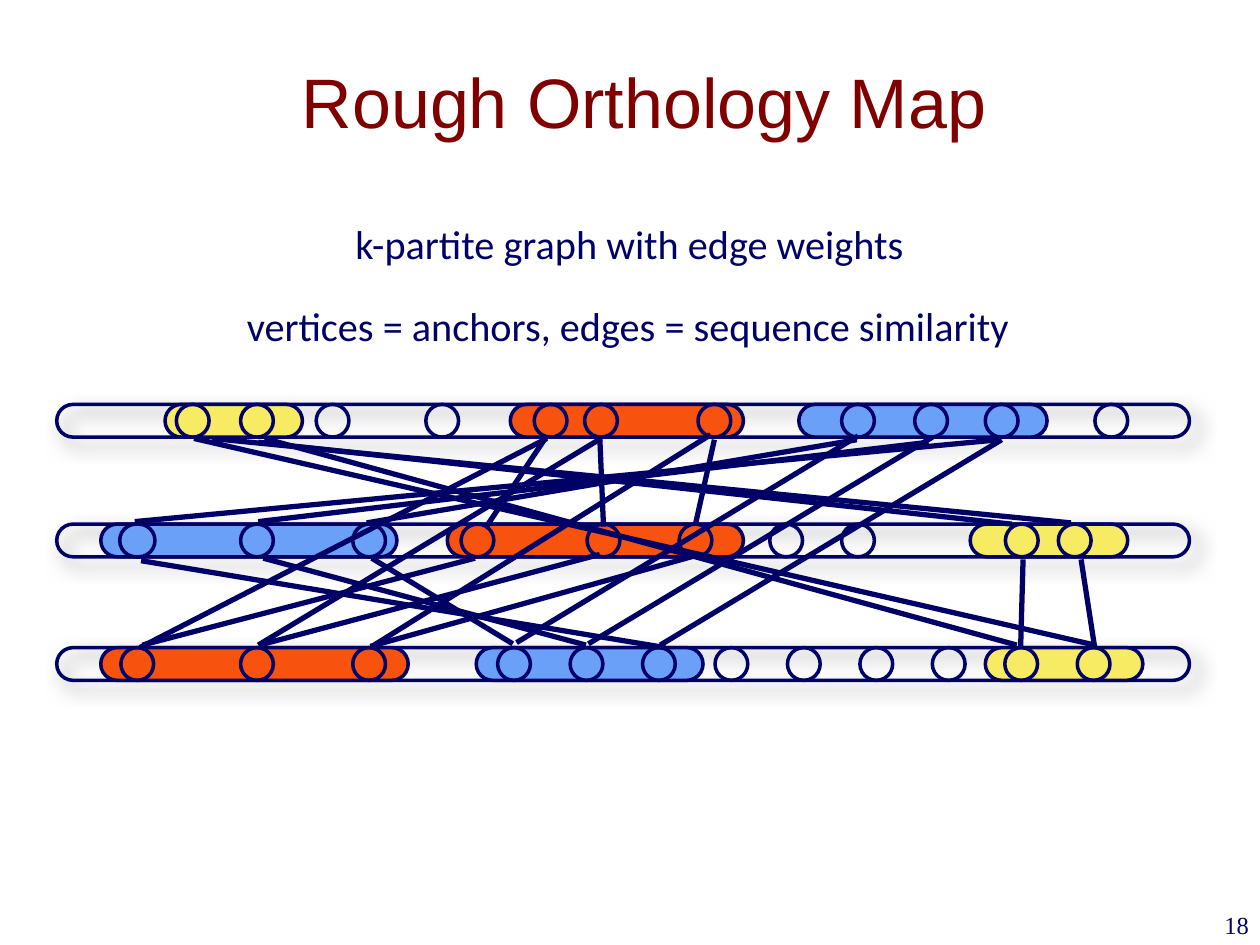
from lxml.etree import SubElement
from pptx import Presentation
from pptx.dml.color import RGBColor
from pptx.enum.shapes import MSO_CONNECTOR, MSO_SHAPE
from pptx.enum.text import MSO_ANCHOR, PP_ALIGN
from pptx.oxml import parse_xml
from pptx.oxml.ns import nsdecls, qn
from pptx.util import Inches, Pt

NAVY = RGBColor(0x00, 0x00, 0x66)
MAROON = RGBColor(0x80, 0x00, 0x00)
YELLOW = RGBColor(0xF7, 0xEB, 0x63)
BLUE = RGBColor(0x6A, 0xA0, 0xF7)
ORANGE = RGBColor(0xF7, 0x52, 0x0E)

TOP, MID, LOW = 3.21, 4.16, 5.14
SIZE = 0.26
SHADOW = f"""<a:effectLst {nsdecls('a')}>
  <a:outerShdw blurRad="{Pt(10)}" dist="{Pt(6)}" dir="2700000" algn="ctr" rotWithShape="0">
    <a:srgbClr val="808080"><a:alpha val="75000"/></a:srgbClr>
  </a:outerShdw>
</a:effectLst>"""

prs = Presentation()
prs.slide_width, prs.slide_height = Inches(10), Inches(7.5)
slide = prs.slides.add_slide(prs.slide_layouts[5])
shapes = slide.shapes


def add_part(kind, left, top, width, fill=None):
    """Add an outlined bar or circle of the common height."""
    part = shapes.add_shape(kind, Inches(left), Inches(top), Inches(width), Inches(SIZE))
    if kind == MSO_SHAPE.ROUNDED_RECTANGLE:
        part.adjustments[0] = 0.5
    if fill is None:
        part.fill.background()
    else:
        part.fill.solid()
        part.fill.fore_color.rgb = fill
    part.line.color.rgb = NAVY
    part.line.width = Pt(2)
    part.shadow.inherit = False
    return part


def set_text(frame, text, name, size, color, align):
    frame.word_wrap = True
    frame.text = text
    para = frame.paragraphs[0]
    para.alignment = align
    para.font.name = name
    para.font.size = Pt(size)
    para.font.color.rgb = color


# Title
title = shapes.title
title.left, title.top = Inches(0.83), Inches(0.17)
title.width, title.height = Inches(8.5), Inches(1.25)
frame = title.text_frame
frame.vertical_anchor = MSO_ANCHOR.MIDDLE
frame.margin_right = Inches(0.04)
set_text(frame, "Rough Orthology Map", "Arial", 40, MAROON, PP_ALIGN.CENTER)

# Genomes
for top in (TOP, MID, LOW):
    track = add_part(MSO_SHAPE.ROUNDED_RECTANGLE, 0.45, top, 8.99)
    props = track._element.spPr
    props.replace(props.find(qn("a:effectLst")), parse_xml(SHADOW))

# Matching segments
segments = [
    (1.31, TOP, 1.09, YELLOW), (7.7, MID, 1.25, YELLOW), (7.82, LOW, 1.25, YELLOW),
    (6.34, TOP, 1.97, BLUE), (3.78, LOW, 1.8, BLUE), (0.8, MID, 2.35, BLUE),
    (0.8, LOW, 2.44, ORANGE), (3.55, MID, 2.35, ORANGE), (4.05, TOP, 1.85, ORANGE),
]
for segment in segments:
    add_part(MSO_SHAPE.ROUNDED_RECTANGLE, *segment)

# Anchors
add_part(MSO_SHAPE.ROUNDED_RECTANGLE, 0.95, MID, 0.28)
anchors = {
    TOP: [1.4, 1.91, 2.51, 3.38, 4.24, 4.64, 5.54, 6.68, 7.26, 7.82, 8.69],
    MID: [1.91, 2.8, 3.66, 4.66, 5.39, 6.11, 6.68, 7.98, 8.4],
    LOW: [0.96, 1.91, 2.8] + [3.95 + 0.575 * i for i in range(9)],
}
for top, lefts in anchors.items():
    for left in lefts:
        add_part(MSO_SHAPE.OVAL, left, top, SIZE)

# Similarity edges: x1, y1, x2, y2
edges = [
    # top to middle
    (5.67, 3.49, 5.52, 4.16), (4.76, 3.46, 4.79, 4.18), (4.34, 3.46, 3.86, 4.18),
    (2.05, 3.51, 8.03, 4.16), (1.68, 3.48, 8.5, 4.15), (7.37, 3.51, 2.05, 4.14),
    (7.93, 3.49, 1.07, 4.14), (6.8, 3.49, 2.91, 4.15),
    # middle to bottom
    (5.28, 5.14, 1.12, 4.45), (4.76, 4.4, 2.06, 5.12), (4.07, 5.11, 2.95, 4.43),
    (4.65, 5.12, 2.09, 4.43), (3.77, 4.43, 1.13, 5.12), (5.52, 4.41, 2.94, 5.13),
    (8.12, 4.44, 8.1, 5.15), (8.58, 4.44, 8.69, 5.15),
    # top to bottom
    (7.4, 3.47, 4.67, 5.11), (7.95, 3.49, 5.24, 5.12), (6.81, 3.46, 4.1, 5.1),
    (1.54, 3.48, 8.69, 5.12), (8.07, 5.12, 2.1, 3.48), (2.97, 5.12, 5.64, 3.45),
    (4.77, 3.48, 2.05, 5.12), (4.34, 3.48, 1.11, 5.14),
]
for ends in edges:
    edge = shapes.add_connector(MSO_CONNECTOR.STRAIGHT, *[Inches(v) for v in ends])
    edge.line.color.rgb = NAVY
    edge.line.width = Pt(3)
    SubElement(edge._element.spPr, qn("a:effectLst"))

# Captions
captions = [
    (2.59, 1.71, 4.82, "k-partite graph with edge weights"),
    (1.56, 2.36, 6.86, "vertices = anchors, edges = sequence similarity"),
]
for left, top, width, text in captions:
    box = shapes.add_textbox(Inches(left), Inches(top), Inches(width), Inches(0.45))
    frame = box.text_frame
    frame.vertical_anchor = MSO_ANCHOR.MIDDLE
    frame.margin_left = frame.margin_right = frame.margin_top = frame.margin_bottom = 0
    set_text(frame, text, "Calibri", 23, NAVY, PP_ALIGN.CENTER)

# Page number
box = shapes.add_textbox(Inches(7.93), Inches(7.17), Inches(2.08), Inches(0.5))
set_text(box.text_frame, "18", "Times New Roman", 14, NAVY, PP_ALIGN.RIGHT)

prs.save("out.pptx")
